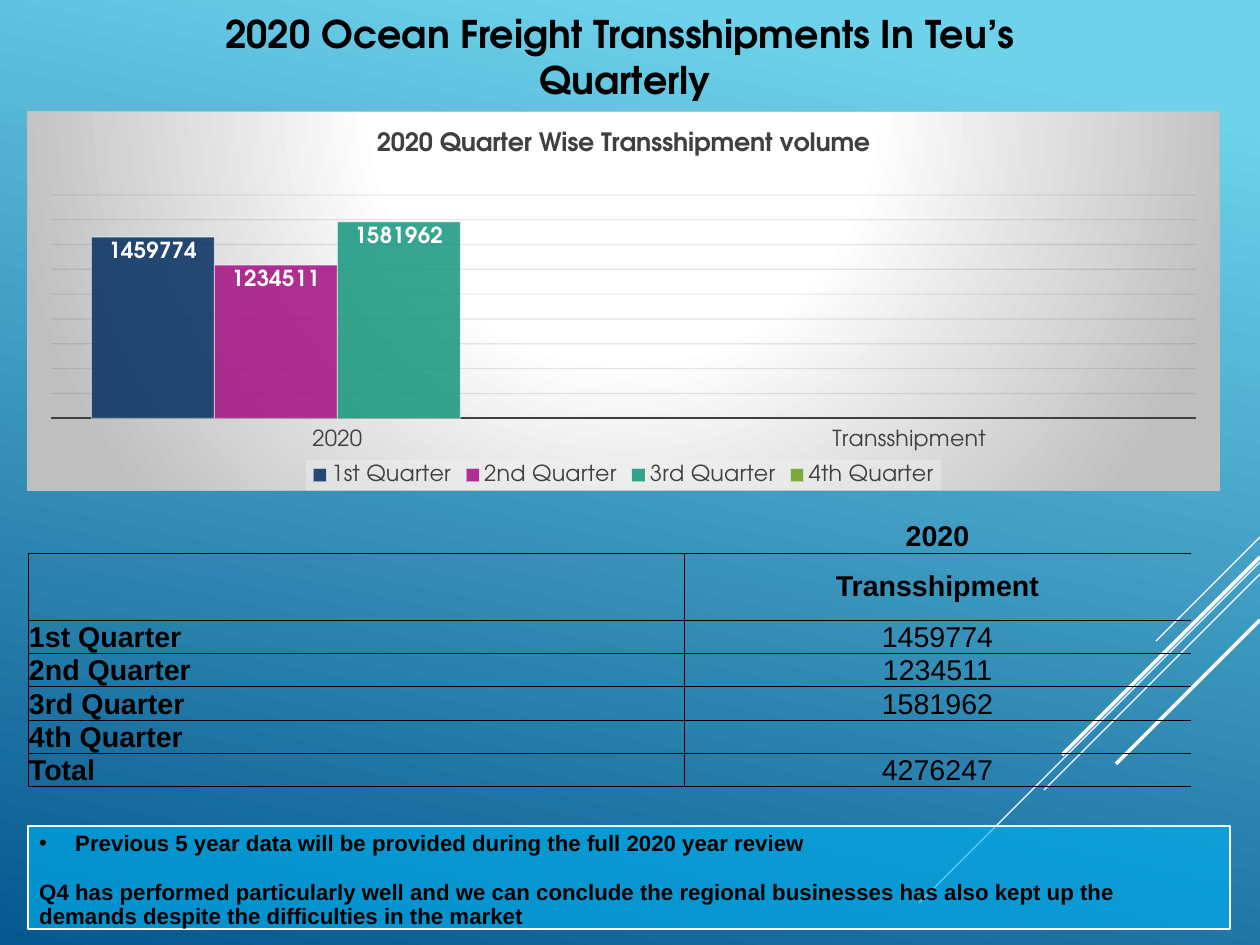
from lxml import etree
from pptx import Presentation
from pptx.chart.data import CategoryChartData
from pptx.dml.color import RGBColor
from pptx.enum.chart import XL_CHART_TYPE as ChartType
from pptx.enum.chart import XL_LABEL_POSITION as LabelPosition
from pptx.enum.chart import XL_LEGEND_POSITION as LegendPosition
from pptx.enum.chart import XL_TICK_LABEL_POSITION as TickLabels
from pptx.enum.chart import XL_TICK_MARK as TickMark
from pptx.enum.shapes import MSO_CONNECTOR as Connector
from pptx.enum.shapes import MSO_SHAPE as Preset
from pptx.enum.text import MSO_ANCHOR as Anchor
from pptx.enum.text import PP_ALIGN as Align
from pptx.oxml import parse_xml
from pptx.oxml.ns import nsdecls, qn
from pptx.util import Pt

EMU_PER_PX = 8000
BLACK = RGBColor(0x00, 0x00, 0x00)
WHITE = RGBColor(0xFF, 0xFF, 0xFF)
GREY = RGBColor(0x40, 0x40, 0x40)
GRID = RGBColor(0x0D, 0x0D, 0x0D)
SKY = RGBColor(0x6E, 0xD2, 0xEB)
OCEAN = RGBColor(0x06, 0x58, 0x8E)
NOTE_BLUE = RGBColor(0x00, 0xB0, 0xF0)
NAVY = RGBColor(0x05, 0x2F, 0x61)
MAGENTA = RGBColor(0xA5, 0x0E, 0x82)
TEAL = RGBColor(0x14, 0x96, 0x7C)
GREEN = RGBColor(0x6A, 0x9E, 0x1F)
HEADING_FONT = "TeX Gyre Adventor"
BODY_FONT = "Arial"
NO_STYLE = "{2D5ABB26-0587-4C30-8999-92F81FD0307C}"

QUARTERS = [
    ("1st Quarter", 1459774, NAVY),
    ("2nd Quarter", 1234511, MAGENTA),
    ("3rd Quarter", 1581962, TEAL),
    ("4th Quarter", None, GREEN),
]


def px(*lengths):
    return [length * EMU_PER_PX for length in lengths]


def format_font(font, size, color, name, bold=False):
    font.size, font.name, font.bold = Pt(size), name, bold
    font.color.rgb = color


def write(paragraph, text, size=18, color=BLACK, name=BODY_FONT, bold=True,
          align=Align.LEFT, spacing=None):
    paragraph.text = text
    paragraph.alignment = align
    paragraph.line_spacing = spacing
    for run in paragraph.runs or [paragraph.add_run()]:
        format_font(run.font, size, color, name, bold)


def set_line(line, color, width):
    line.color.rgb = color
    line.width = Pt(width)


def set_alpha(element, query, percent):
    for color in element.xpath(query):
        etree.SubElement(color, qn("a:alpha"), val=str(percent * 1000))


def paint_background(slide):
    fill = slide.background.fill
    fill.gradient()
    fill.gradient_angle = 258
    for stop, (position, color) in zip(fill.gradient_stops, [(0.1, SKY), (1, OCEAN)]):
        stop.position = position
        stop.color.rgb = color


def add_diagonals(slide, right):
    """Draw the 45-degree lines that run down and left from the right edge."""
    for top, run, width in [(537, 104, 0.75), (562, 341, 0.75), (574, 216, 0.75),
                            (557, 198, 2.25), (620, 144, 2.25)]:
        line = slide.shapes.add_connector(
            Connector.STRAIGHT, *px(right, top, right - run, top + run))
        set_line(line.line, WHITE, width)
        etree.SubElement(line.element.spPr, qn("a:effectLst"))


def place_title(slide, box):
    title = slide.shapes.title
    title.left, title.top, title.width, title.height = px(*box)
    title.text_frame.vertical_anchor = Anchor.MIDDLE
    write(title.text_frame.paragraphs[0],
          "2020 Ocean Freight Transshipments In Teu’s \vQuarterly",
          size=24, name=HEADING_FONT, align=Align.CENTER)


def paint_chart_area(chart):
    stops = "".join(
        f'<a:gs pos="{position}000"><a:srgbClr val="{color}"/></a:gs>'
        for position, color in [(0, "FFFFFF"), (39, "FFFFFF"), (100, "BFBFBF")])
    chart.element.find(qn("c:chart")).addnext(parse_xml(
        f'<c:spPr {nsdecls("c", "a")}><a:gradFill><a:gsLst>{stops}</a:gsLst>'
        '<a:path path="circle"><a:fillToRect l="50000" t="-80000" r="50000" b="180000"/>'
        '</a:path></a:gradFill><a:ln w="9525"><a:solidFill><a:srgbClr val="BFBFBF"/>'
        '</a:solidFill></a:ln></c:spPr>'))


def place_plot(chart, **shares):
    """Fix the inner plot area, given as shares of the chart."""
    plot_area = chart.element.find(".//" + qn("c:plotArea"))
    for layout in plot_area.findall(qn("c:layout")):
        plot_area.remove(layout)
    values = "".join(f'<c:{key} val="{share}"/>' for key, share in shares.items())
    plot_area.insert(0, parse_xml(
        f'<c:layout {nsdecls("c")}><c:manualLayout><c:layoutTarget val="inner"/>'
        '<c:xMode val="edge"/><c:yMode val="edge"/>'
        f'{values}</c:manualLayout></c:layout>'))


def format_axes(chart):
    category, value = chart.category_axis, chart.value_axis
    category.major_tick_mark = TickMark.NONE
    category.tick_label_position = TickLabels.LOW
    format_font(category.tick_labels.font, 14, GREY, HEADING_FONT)
    set_line(category.format.line, GREY, 1.5)
    value.visible = False
    value.minimum_scale, value.maximum_scale, value.major_unit = 0, 1800000, 200000
    set_line(value.major_gridlines.format.line, GRID, 0.75)
    set_alpha(chart.element, ".//c:majorGridlines//a:srgbClr", 10)


def add_volume_chart(slide, box):
    data = CategoryChartData()
    data.categories = ["2020", "Transshipment"]
    for quarter, volume, _ in QUARTERS:
        data.add_series(quarter, (volume, None))
    chart = slide.shapes.add_chart(ChartType.COLUMN_CLUSTERED, *px(*box), data).chart
    format_font(chart.font, 14, WHITE, HEADING_FONT)
    paint_chart_area(chart)
    place_plot(chart, x=0.02, y=0.22, w=0.96, h=0.59)
    write(chart.chart_title.text_frame.paragraphs[0],
          "2020 Quarter Wise Transshipment volume",
          size=16, color=GREY, name=HEADING_FONT, align=Align.CENTER)
    chart.chart_title.include_in_layout = False
    format_axes(chart)

    plot = chart.plots[0]
    plot.gap_width, plot.overlap, plot.vary_by_categories = 65, 0, False
    for series, (_, _, color) in zip(plot.series, QUARTERS):
        series.format.fill.solid()
        series.format.fill.fore_color.rgb = color
        set_line(series.format.line, WHITE, 0.75)
        set_alpha(series._element, "c:spPr/a:solidFill/a:srgbClr", 85)
        set_alpha(series._element, "c:spPr/a:ln//a:srgbClr", 50)
        labels = series.data_labels
        labels.show_value, labels.position = True, LabelPosition.INSIDE_END
        format_font(labels.font, 14, WHITE, HEADING_FONT, bold=True)

    chart.has_legend = True
    legend = chart.legend
    legend.position, legend.include_in_layout = LegendPosition.BOTTOM, False
    format_font(legend.font, 14, GREY, HEADING_FONT)
    chart.element.find(".//" + qn("c:legend")).find(qn("c:txPr")).addprevious(parse_xml(
        f'<c:spPr {nsdecls("c", "a")}><a:solidFill><a:srgbClr val="F2F2F2">'
        '<a:alpha val="39000"/></a:srgbClr></a:solidFill></c:spPr>'))


def set_borders(cell, sides):
    properties = cell._tc.get_or_add_tcPr()
    for index, side in enumerate(sides):
        properties.insert(index, parse_xml(
            f'<a:ln{side} {nsdecls("a")} w="6350"><a:solidFill>'
            f'<a:srgbClr val="{BLACK}"/></a:solidFill></a:ln{side}>'))


def add_volume_table(slide, box):
    total = sum(volume or 0 for _, volume, _ in QUARTERS)
    rows = [("", "2020"), ("", "Transshipment")]
    rows += [(quarter, str(volume or "")) for quarter, volume, _ in QUARTERS]
    rows.append(("Total", str(total)))
    table = slide.shapes.add_table(len(rows), 2, *px(*box)).table
    table.first_row = table.horz_banding = False
    table._tbl.tblPr.find(qn("a:tableStyleId")).text = NO_STYLE
    for column, width in zip(table.columns, px(656, box[2] - 656)):
        column.width = width
    unit = px(box[3])[0] // (len(rows) + 1)
    for index, texts in enumerate(rows):
        table.rows[index].height = unit * 2 if index == 1 else unit
        for column, text in enumerate(texts):
            cell = table.cell(index, column)
            cell.margin_left, cell.margin_right, cell.margin_top, cell.margin_bottom = px(1, 1, 1, 0)
            cell.vertical_anchor = Anchor.MIDDLE if index < 2 else Anchor.BOTTOM
            write(cell.text_frame.paragraphs[0], text, bold=column == 0 or index < 2,
                  align=Align.CENTER if column else Align.LEFT, spacing=0.93)
            cell.fill.background()
            set_borders(cell, "LTB" if index else "B")


def add_note(slide, box):
    note = slide.shapes.add_shape(Preset.RECTANGLE, *px(*box))
    note.shadow.inherit = False
    note.fill.solid()
    note.fill.fore_color.rgb = NOTE_BLUE
    set_alpha(note.element, "p:spPr/a:solidFill/a:srgbClr", 63)
    set_line(note.line, WHITE, 0.75)
    frame = note.text_frame
    frame.word_wrap, frame.vertical_anchor = True, Anchor.TOP
    bullet, remark = frame.paragraphs[0], frame.add_paragraph()
    write(bullet, "Previous 5 year data will be provided during the full 2020 year review",
          size=14, spacing=0.93)
    write(remark, "Q4 has performed particularly well and we can conclude the regional "
          "businesses has also kept up the demands despite the difficulties in the market",
          size=14, spacing=0.93)
    remark.space_before = Pt(15)
    properties = bullet._p.get_or_add_pPr()
    indent = px(36)[0]
    properties.set("marL", str(indent))
    properties.set("indent", str(-indent))
    color = etree.SubElement(properties, qn("a:buClr"))
    etree.SubElement(color, qn("a:srgbClr"), val=str(BLACK))
    etree.SubElement(properties, qn("a:buFont"), typeface=BODY_FONT)
    etree.SubElement(properties, qn("a:buChar"), char="•")


def main():
    presentation = Presentation()
    presentation.slide_width, presentation.slide_height = px(1260, 945)
    slide = presentation.slides.add_slide(presentation.slide_layouts[5])
    paint_background(slide)
    add_diagonals(slide, 1260)
    place_title(slide, (58, -23, 1134, 158))
    add_volume_chart(slide, (27, 111, 1193, 380))
    add_volume_table(slide, (28, 520, 1163, 267))
    add_note(slide, (28, 826, 1202, 103))
    presentation.save("out.pptx")


if __name__ == "__main__":
    main()
